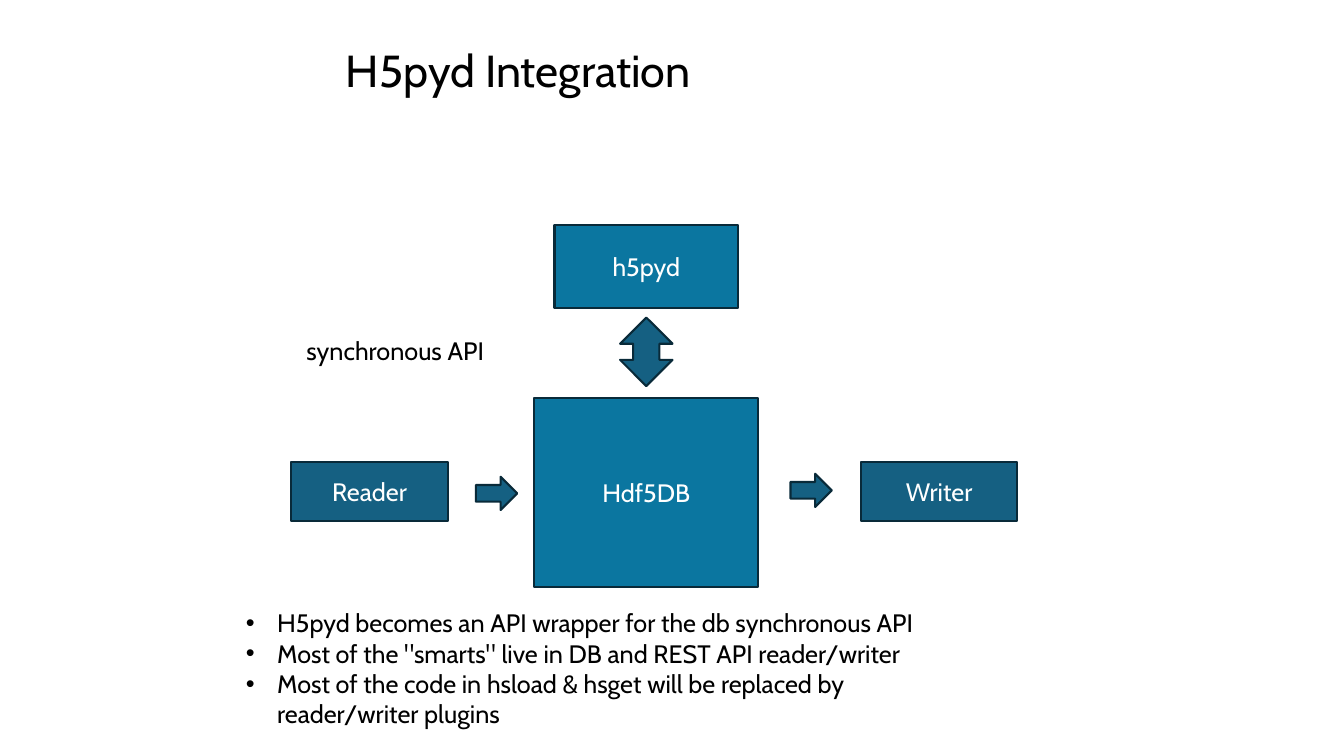
from lxml.etree import SubElement as Sub
from pptx import Presentation
from pptx.dml.color import RGBColor as RGB
from pptx.enum.shapes import MSO_SHAPE as Kind
from pptx.enum.text import MSO_ANCHOR as Anchor, PP_ALIGN as Align
from pptx.oxml.ns import qn
from pptx.util import Inches, Pt

HUES = {"bright": "0B76A0", "deep": "156082", "edge": "092A39",
        "ink": "000000", "pale": "FFFFFF"}


def write(frame, lines, size=18, hue="ink", align=Align.LEFT, anchor=Anchor.TOP):
    """Fill a text frame with one paragraph per line."""
    for name, value in {"word_wrap": True, "vertical_anchor": anchor}.items():
        setattr(frame, name, value)
    frame.text = "\n".join(lines)
    for para in frame.paragraphs:
        para.alignment = align
        for name, value in {"name": "Cabin", "size": Pt(size)}.items():
            setattr(para.font, name, value)
        para.font.color.rgb = RGB.from_string(HUES[hue])


def draw(kind, hue, *box):
    """Add an outlined shape at left, top, width, height."""
    shape = slide.shapes.add_shape(kind, *map(Inches, box))
    shape.shadow.inherit = False
    shape.fill.solid()
    shape.fill.fore_color.rgb = RGB.from_string(HUES[hue])
    shape.line.color.rgb = RGB.from_string(HUES["edge"])
    shape.line.width = Pt(1.5)
    return shape


deck = Presentation()
deck.slide_width, deck.slide_height = Inches(13.33), Inches(7.5)
slide = deck.slides.add_slide(deck.slide_layouts[5])

# Title
title = slide.shapes.title
spot = {"left": 3.33, "top": 0.37, "width": 7.23, "height": 0.64}
for name, value in spot.items():
    setattr(title, name, Inches(value))
write(title.text_frame, ["H5pyd Integration"], 32)

# Boxes: the side pair shares one row and size
row, wide, high = 4.58, 1.55, 0.59
boxes = [
    ("Hdf5DB", "bright", 5.3, 3.95, 2.22, 1.87),
    ("Reader", "deep", 2.89, row, wide, high),
    ("Writer", "deep", 8.54, row, wide, high),
    ("h5pyd", "bright", 5.5, 2.23, 1.82, 0.83),
]
for label, hue, *box in boxes:
    write(draw(Kind.RECTANGLE, hue, *box).text_frame, [label],
          hue="pale", align=Align.CENTER, anchor=Anchor.MIDDLE)

# Block arrows
for left, top in [(4.72, 4.73), (7.84, 4.7)]:
    draw(Kind.RIGHT_ARROW, "deep", left, top, 0.41, 0.33)
draw(Kind.UP_DOWN_ARROW, "deep", 6.15, 3.15, 0.52, 0.68)

# Arrow label
label = slide.shapes.add_textbox(*map(Inches, (2.94, 3.28, 2.34, 0.4)))
write(label.text_frame, ["synchronous API"])

# Bullet notes
points = [
    "H5pyd becomes an API wrapper for the db synchronous API",
    'Most of the "smarts" live in DB and REST API reader/writer',
    "Most of the code in hsload & hsget will be replaced by reader/writer plugins",
]
notes = slide.shapes.add_textbox(*map(Inches, (2.34, 5.98, 7.28, 1.31)))
write(notes.text_frame, points)
indent = Inches(0.31)
for para in notes.text_frame.paragraphs:
    props = para._p.get_or_add_pPr()
    props.set("marL", str(indent))
    props.set("indent", str(-indent))
    Sub(props, qn("a:buFont")).set("typeface", "Arial")
    Sub(props, qn("a:buChar")).set("char", "•")
    # Keep default run settings after the bullet, as the schema orders them
    props.append(props.find(qn("a:defRPr")))

deck.save("out.pptx")
